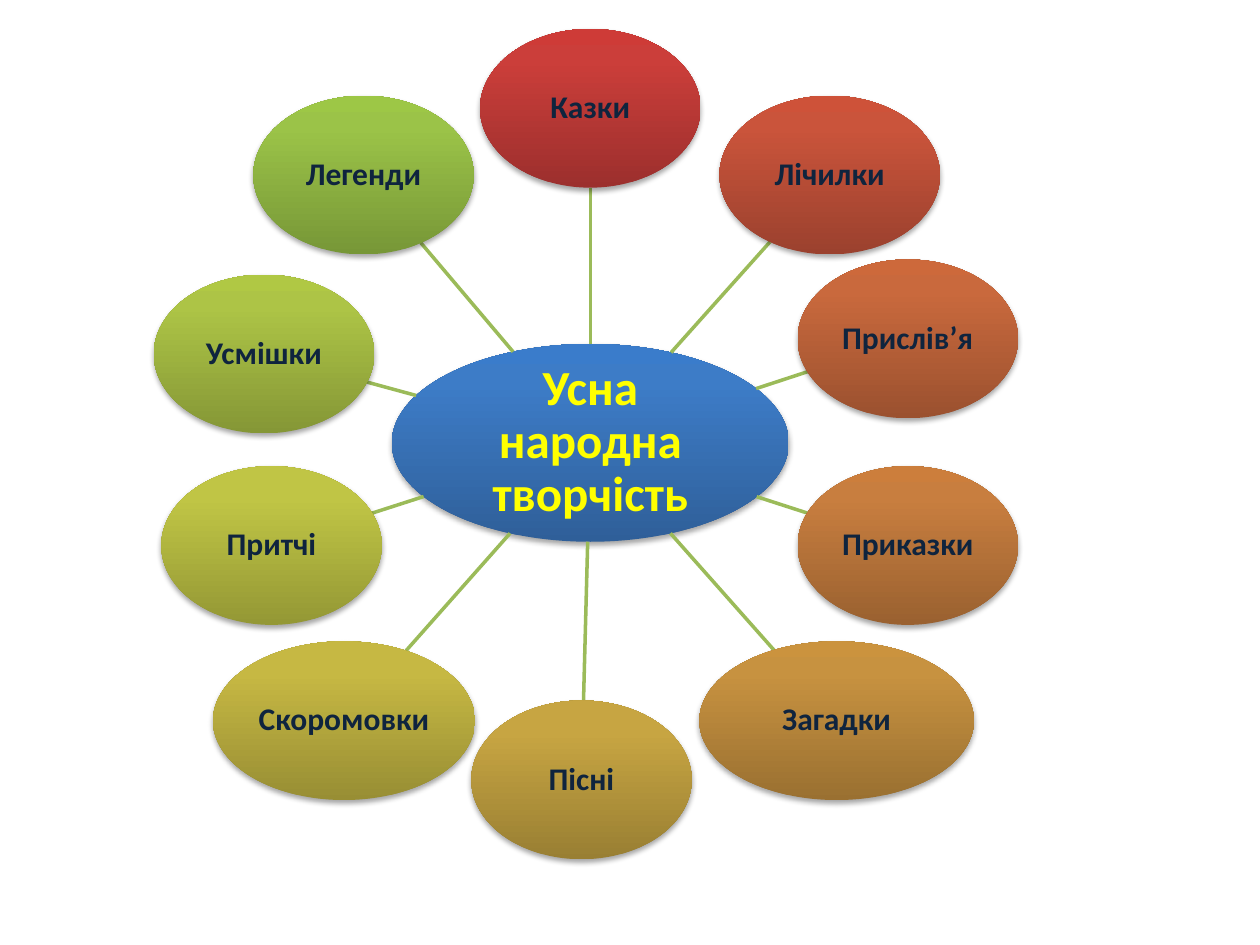
import copy
import dataclasses
import math

import pptx
import pptx.dml.color
import pptx.enum.shapes
import pptx.enum.text
import pptx.oxml
import pptx.oxml.ns
import pptx.util
from pptx.util import Inches


@dataclasses.dataclass(frozen=True)
class Theme:
    font: str = "Calibri"
    hub_size: int = 28
    petal_size: int = 18
    hub_text: str = "FFFF00"
    petal_text: str = "0F243E"
    spoke: str = "9BBB59"
    spoke_width: int = 2
    hub_fill: tuple = ("2F5F99", "3D7CC7", "3A7CCB")
    stops: tuple = (0, 0.8, 1)


@dataclasses.dataclass(frozen=True)
class Box:
    left: float
    top: float
    width: float
    height: float

    @property
    def center(self):
        return self.left + self.width / 2, self.top + self.height / 2

    def edge_toward(self, other):
        x, y = self.center
        dx, dy = other.center[0] - x, other.center[1] - y
        scale = 1 / math.hypot(2 * dx / self.width, 2 * dy / self.height)
        return x + dx * scale, y + dy * scale


THEME = Theme()
HUB = Box(1.89, 2.5, 3.15, 1.57)
PETAL_HEIGHT = 1.26
PETALS = [
    ("Казки", 2.59, 0, 1.75, ("9C2F2D", "CB3E3A", "CE3B37")),
    ("Лічилки", 4.49, 0.53, 1.75, ("9B412E", "CA543B", "CE5239")),
    ("Прислів’я", 5.11, 1.83, 1.75, ("9B512F", "C9693D", "CD693B")),
    ("Приказки", 5.11, 3.47, 1.75, ("9A6130", "C87E3F", "CC7E3C")),
    ("Загадки", 4.33, 4.86, 2.18, ("9A7031", "C79240", "CB933E")),
    ("Пісні", 2.52, 5.33, 1.75, ("997F33", "C7A542", "CAA740")),
    ("Скоромовки", 0.47, 4.86, 2.08, ("988E34", "C6B843", "C9BB41")),
    ("Притчі", 0.06, 3.47, 1.75, ("949835", "C0C545", "C3C843")),
    ("Усмішки", 0, 1.95, 1.75, ("859736", "ADC446", "B0C844")),
    ("Легенди", 0.79, 0.53, 1.75, ("779737", "9BC348", "9DC746")),
]


def color(value):
    return pptx.dml.color.RGBColor.from_string(value)


def shade(shape, colors):
    shape.fill.gradient()
    stop_list = shape._element.spPr.find(".//" + pptx.oxml.ns.qn("a:gsLst"))
    stop_list.append(copy.deepcopy(stop_list[-1]))
    for stop, position, value in zip(shape.fill.gradient_stops, THEME.stops, colors):
        stop.position = position
        stop.color.rgb = color(value)
    shape.fill.gradient_angle = 90
    shape.line.fill.background()


def add_shadow(shape):
    shape.shadow.inherit = False
    effects = shape._element.spPr.find(pptx.oxml.ns.qn("a:effectLst"))
    effects.append(pptx.oxml.parse_xml(
        f'<a:outerShdw {pptx.oxml.ns.nsdecls("a")} blurRad="{pptx.util.Pt(3.1)}" '
        f'dist="{pptx.util.Pt(1.8)}" dir="5400000" rotWithShape="0">'
        '<a:srgbClr val="000000"><a:alpha val="35000"/></a:srgbClr></a:outerShdw>'))


def add_bubble(page, box, text, colors, size, text_color, inset):
    shape = page.shapes.add_shape(
        pptx.enum.shapes.MSO_SHAPE.OVAL,
        Inches(box.left), Inches(box.top), Inches(box.width), Inches(box.height))
    shade(shape, colors)
    add_shadow(shape)
    frame = shape.text_frame
    frame.text = text
    frame.word_wrap = True
    frame.vertical_anchor = pptx.enum.text.MSO_ANCHOR.MIDDLE
    frame.margin_left = frame.margin_right = Inches(inset)
    frame.margin_top = frame.margin_bottom = Inches(inset)
    para = frame.paragraphs[0]
    para.alignment = pptx.enum.text.PP_ALIGN.CENTER
    para.line_spacing = 0.9
    font = para.runs[0].font
    font.name = THEME.font
    font.size = pptx.util.Pt(size)
    font.bold = True
    font.color.rgb = color(text_color)


def add_spoke(page, hub, petal):
    ends = [Inches(value) for value in (*hub.edge_toward(petal), *petal.edge_toward(hub))]
    spoke = page.shapes.add_connector(pptx.enum.shapes.MSO_CONNECTOR.STRAIGHT, *ends)
    spoke.line.color.rgb = color(THEME.spoke)
    spoke.line.width = pptx.util.Pt(THEME.spoke_width)
    spoke._element.spPr.append(
        pptx.oxml.parse_xml(f'<a:effectLst {pptx.oxml.ns.nsdecls("a")}/>'))


def add_radial_diagram(page, area):
    hub = Box(area.left + HUB.left, area.top + HUB.top, HUB.width, HUB.height)
    add_bubble(page, hub, "Усна народна творчість", THEME.hub_fill,
               THEME.hub_size, THEME.hub_text, 0.02)
    for text, left, top, width, colors in PETALS:
        petal = Box(area.left + left, area.top + top, width, PETAL_HEIGHT)
        add_spoke(page, hub, petal)
        add_bubble(page, petal, text, colors, THEME.petal_size, THEME.petal_text, 0.01)


def main():
    deck = pptx.Presentation()
    deck.slide_width = Inches(10)
    deck.slide_height = Inches(7.5)
    page = deck.slides.add_slide(deck.slide_layouts[6])
    add_radial_diagram(page, Box(1.22, 0.23, 6.86, 6.59))
    deck.save("out.pptx")


if __name__ == "__main__":
    main()
